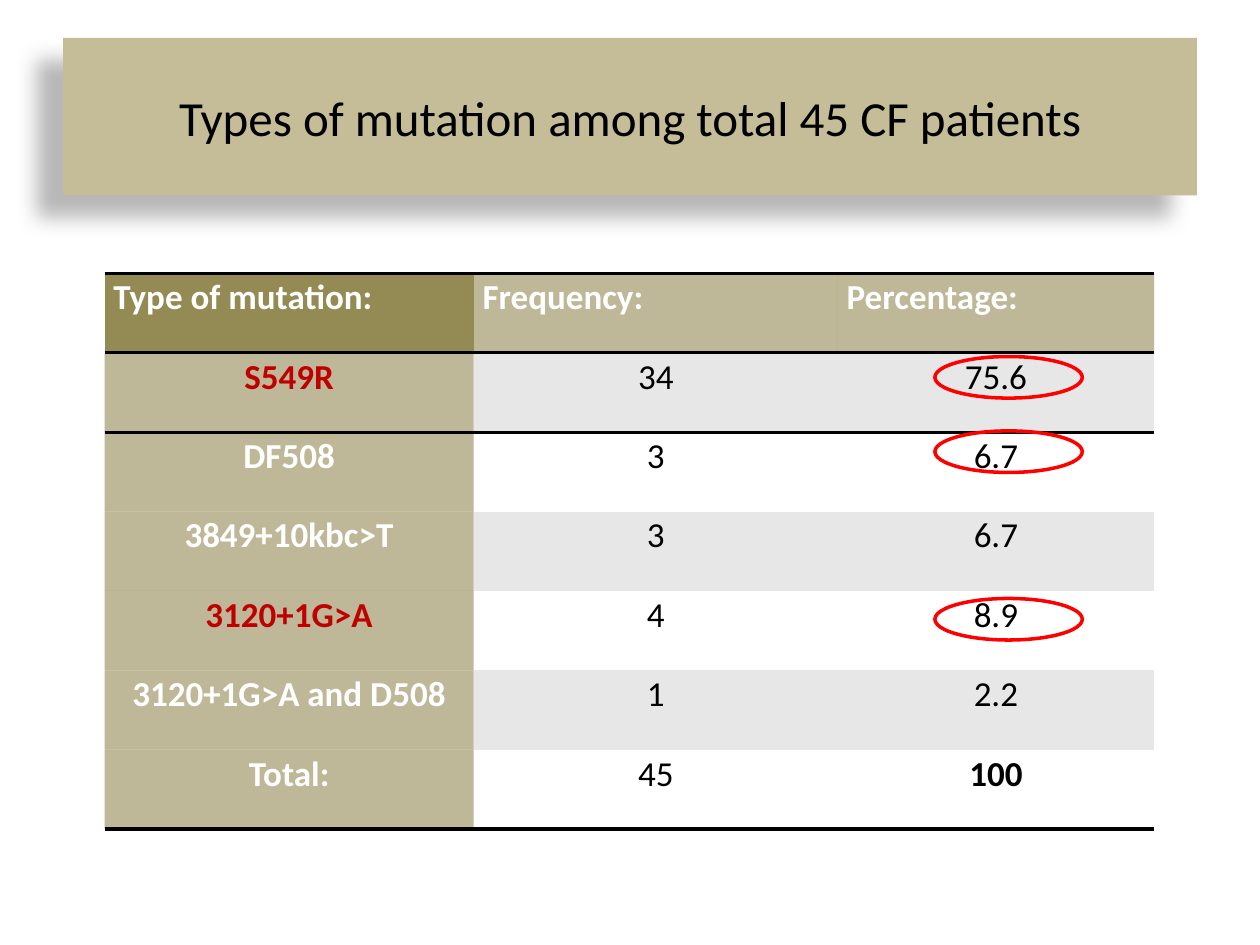
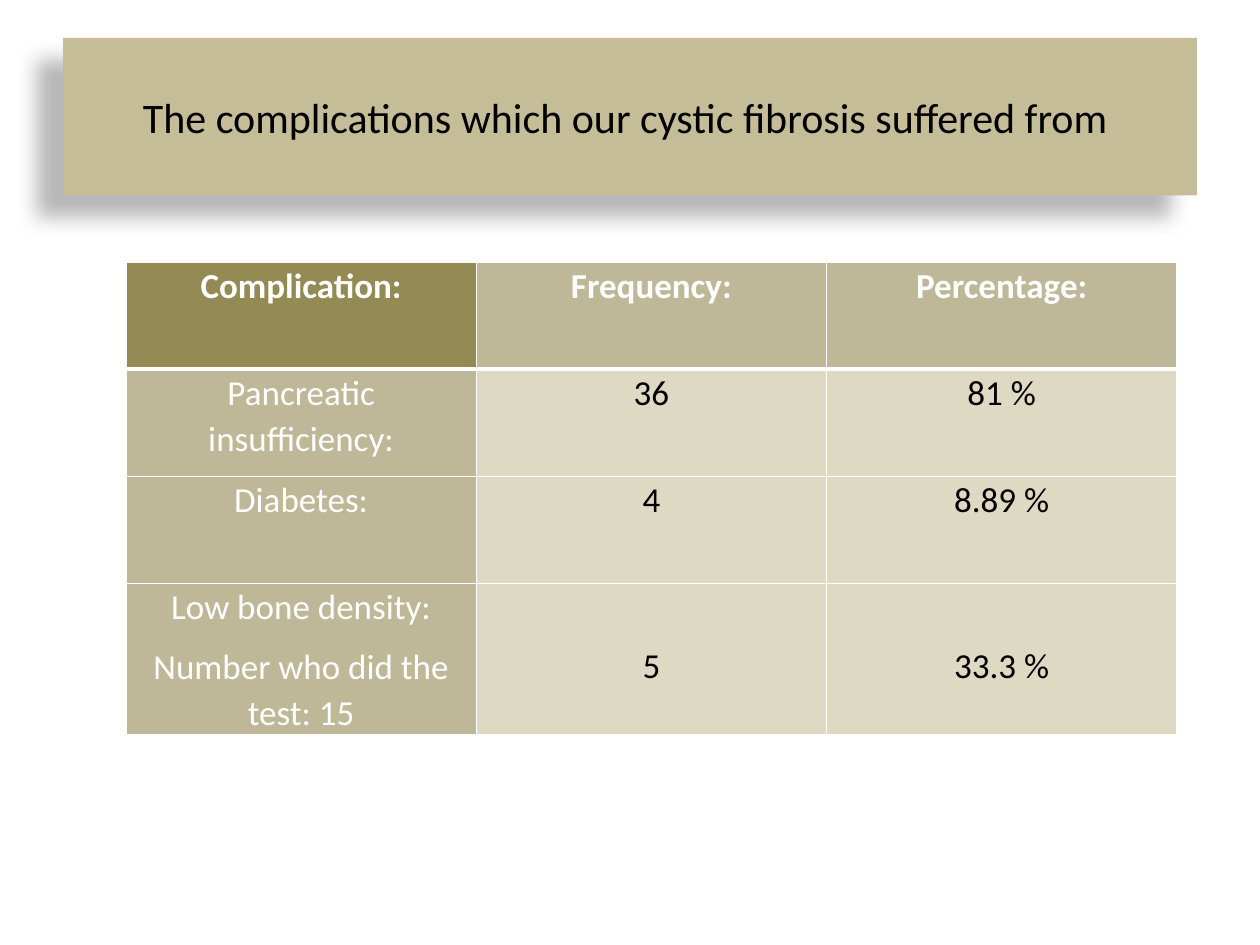
from lxml import etree
from pptx import Presentation
from pptx import util as u
from pptx.dml.color import RGBColor
from pptx.enum import shapes, text
from pptx.oxml import ns

COLORS = {
    "band": "C4BD97", "olive": "948A54", "cream": "DDD9C3", "grey": "E7E7E7",
    "white": "FFFFFF", "black": "000000", "dark_red": "C00000", "red": "FF0000",
}
FONT = "Calibri"
NO_STYLE = "{2D5ABB26-0587-4C30-8999-92F81FD0307C}"
OLIVE_ALPHA = 60
LEFT, CENTER = text.PP_ALIGN.LEFT, text.PP_ALIGN.CENTER


def rgb(name):
    return RGBColor.from_string(COLORS[name])


def sub(parent, tag, **attrs):
    """Append a DrawingML element."""
    return etree.SubElement(parent, ns.qn(tag), {k: str(v) for k, v in attrs.items()})


def write(tf, content, size=20, color="black", bold=False, align=CENTER,
          line_spacing=None, space_after=None):
    """Fill a text frame, one paragraph for each line of content."""
    for i, line in enumerate(content.split("\n")):
        p = tf.add_paragraph() if i else tf.paragraphs[0]
        p.alignment = align
        p.line_spacing = line_spacing
        p.space_after = space_after
        r = p.add_run()
        r.text = line
        r.font.name, r.font.size, r.font.bold = FONT, u.Pt(size), bold
        r.font.color.rgb = rgb(color)


class Deck:
    def __init__(self):
        self.prs = Presentation()
        self.prs.slide_width, self.prs.slide_height = u.Inches(10), u.Inches(7.5)
        self.s = None

    def slide(self, title, size):
        """Start a slide with its shadowed title band."""
        self.s = self.prs.slides.add_slide(self.prs.slide_layouts[5])
        sp = self.s.shapes.title
        sp.left, sp.top = u.Inches(0.5), u.Inches(0.3)
        sp.width, sp.height = u.Inches(9), u.Inches(1.25)
        sp.fill.solid()
        sp.fill.fore_color.rgb = rgb("band")
        sp.shadow.inherit = False
        effects = sp._element.spPr.find(ns.qn("a:effectLst"))
        shadow = sub(effects, "a:outerShdw", blurRad=u.Pt(11.8), dist=u.Pt(19.7),
                     dir=141 * 60000, algn="ctr", rotWithShape=0)
        sub(sub(shadow, "a:srgbClr", val=COLORS["black"]), "a:alpha", val=28000)
        sp.text_frame.vertical_anchor = text.MSO_ANCHOR.MIDDLE
        sp.text_frame.auto_size = text.MSO_AUTO_SIZE.NONE
        write(sp.text_frame, title, size=size)

    def table(self, x, y, widths, heights):
        """Add a plain table, to be filled cell by cell."""
        frame = self.s.shapes.add_table(
            len(heights), len(widths), u.Inches(x), u.Inches(y),
            u.Inches(sum(widths)), u.Inches(sum(heights)))
        table = frame.table
        table.first_row = table.horz_banding = False
        frame._element.find(".//" + ns.qn("a:tableStyleId")).text = NO_STYLE
        for column, width in zip(table.columns, widths):
            column.width = u.Inches(width)
        for row, height in zip(table.rows, heights):
            row.height = u.Inches(height)
        return table

    def cell(self, cell, content, fill, alpha=100, borders=None, top=0, **style):
        """Fill one cell; borders maps the sides L, R, T, B to (colour, points)."""
        cell.margin_left = cell.margin_right = u.Inches(0.07)
        cell.margin_top, cell.margin_bottom = u.Inches(top), 0
        cell.fill.solid()
        cell.fill.fore_color.rgb = rgb(fill)
        pr = cell._tc.tcPr
        if alpha < 100:
            sub(pr.find(".//" + ns.qn("a:srgbClr")), "a:alpha", val=alpha * 1000)
        borders = borders or {}
        for i, side in enumerate(s for s in "LRTB" if s in borders):
            color, width = borders[side]
            ln = sub(pr, f"a:ln{side}", w=u.Pt(width))
            sub(sub(ln, "a:solidFill"), "a:srgbClr", val=COLORS[color])
            pr.insert(i, ln)
        write(cell.text_frame, content, line_spacing=1.07, space_after=u.Pt(8), **style)

    def ring(self, x, y, w, h):
        """Outline a value with a red ellipse."""
        sp = self.s.shapes.add_shape(shapes.MSO_SHAPE.OVAL, u.Inches(x), u.Inches(y),
                                     u.Inches(w), u.Inches(h))
        sp.shadow.inherit = False
        sp.fill.background()
        sp.line.color.rgb = rgb("red")
        sp.line.width = u.Pt(2)


def mutations(deck):
    deck.slide("Types of mutation among total 45 CF patients", 28)
    rows = [
        ("Type of mutation:", "Frequency:", "Percentage:"),
        ("S549R", "34", "75.6"),
        ("DF508", "3", "6.7"),
        ("3849+10kbc>T", "3", "6.7"),
        ("3120+1G>A", "4", "8.9"),
        ("3120+1G>A and D508", "1", "2.2"),
        ("Total:", "45", "100"),
    ]
    table = deck.table(0.83, 2.17, [2.93, 2.89, 2.51], [0.63] * len(rows))
    last, rule = len(rows) - 1, ("black", 2)
    for i, row in enumerate(rows):
        borders = {0: {"T": rule, "B": rule}, 1: {"T": rule}, last: {"B": rule}}.get(i)
        for j, content in enumerate(row):
            heading = i == 0 or j == 0
            if heading:
                fill, alpha = "olive", OLIVE_ALPHA if i or j else 100
                color = "dark_red" if content in ("S549R", "3120+1G>A") else "white"
            else:
                fill, alpha, color = "grey" if i % 2 else "white", 100, "black"
            deck.cell(table.cell(i, j), content, fill, alpha, borders, color=color,
                      bold=heading or content == "100", align=CENTER if i else LEFT)

    # Rings around the notable percentages
    for y in (2.83, 3.42, 4.75):
        deck.ring(7.42, y, 1.17, 0.33)


def complications(deck):
    deck.slide("The complications which our cystic fibrosis suffered from ", 24)
    rows = [
        ("Complication:", "Frequency:", "Percentage:"),
        ("Pancreatic insufficiency:", "36", "81 %"),
        ("Diabetes:", "4", "8.89 %"),
        ("Low bone density:\nNumber who did the test: 15", "5", "33.3 %"),
    ]
    table = deck.table(1, 2.08, [2.78] * 3, [0.85, 0.85, 0.85, 1.12])
    last = len(rows) - 1
    for i, row in enumerate(rows):
        borders = dict.fromkeys("LRTB", ("white", 1))
        if i < 2:
            borders["T" if i else "B"] = ("white", 3)
        for j, content in enumerate(row):
            heading = i == 0 or j == 0
            # Values of the last row sit level with the second line of its label
            deck.cell(table.cell(i, j), content, "olive" if heading else "cream",
                      OLIVE_ALPHA if heading and (i or j) else 100, borders,
                      top=0.47 if i == last and j else 0,
                      color="white" if heading else "black", bold=i == 0)


def main():
    deck = Deck()
    mutations(deck)
    complications(deck)
    deck.prs.save("out.pptx")


if __name__ == "__main__":
    main()
